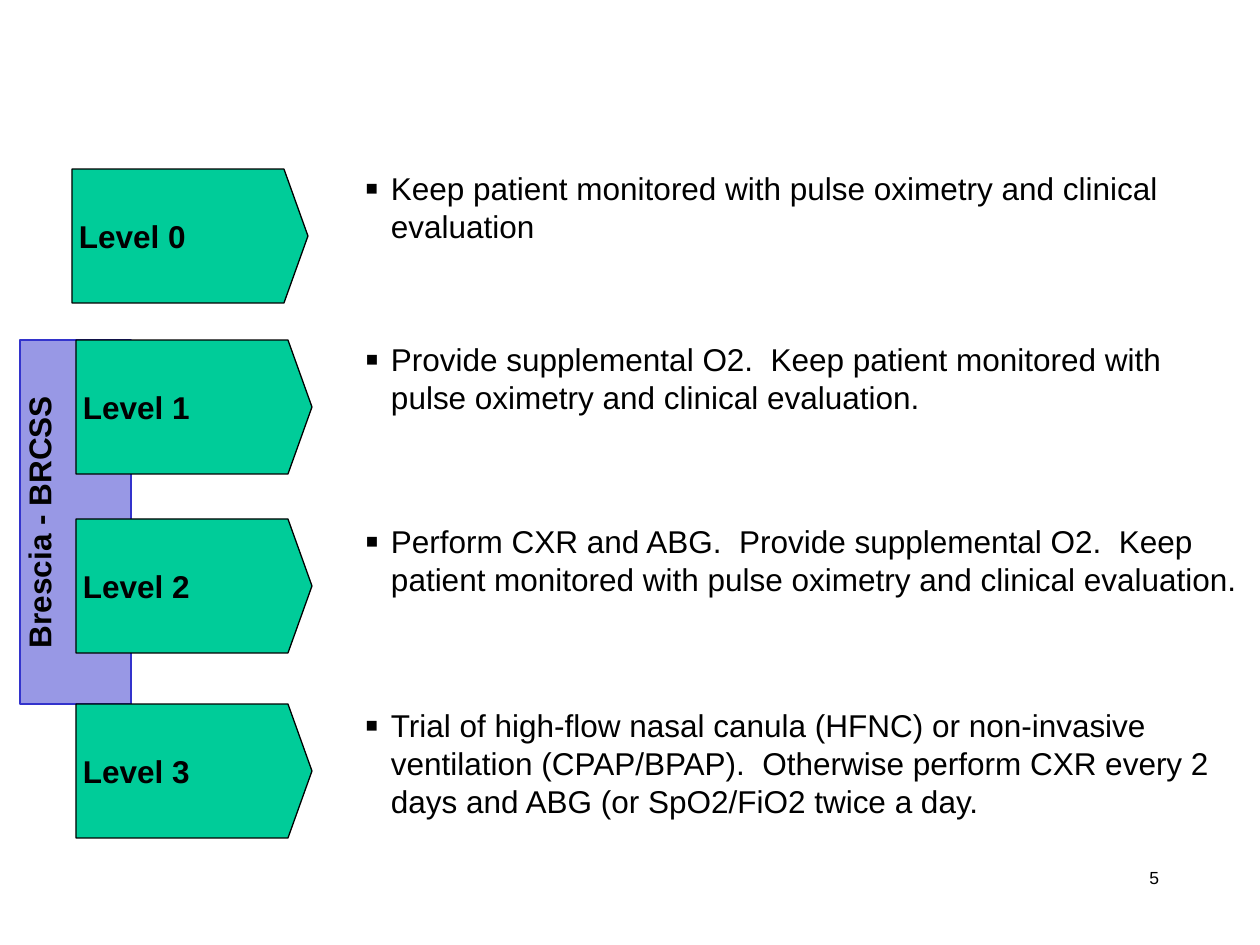
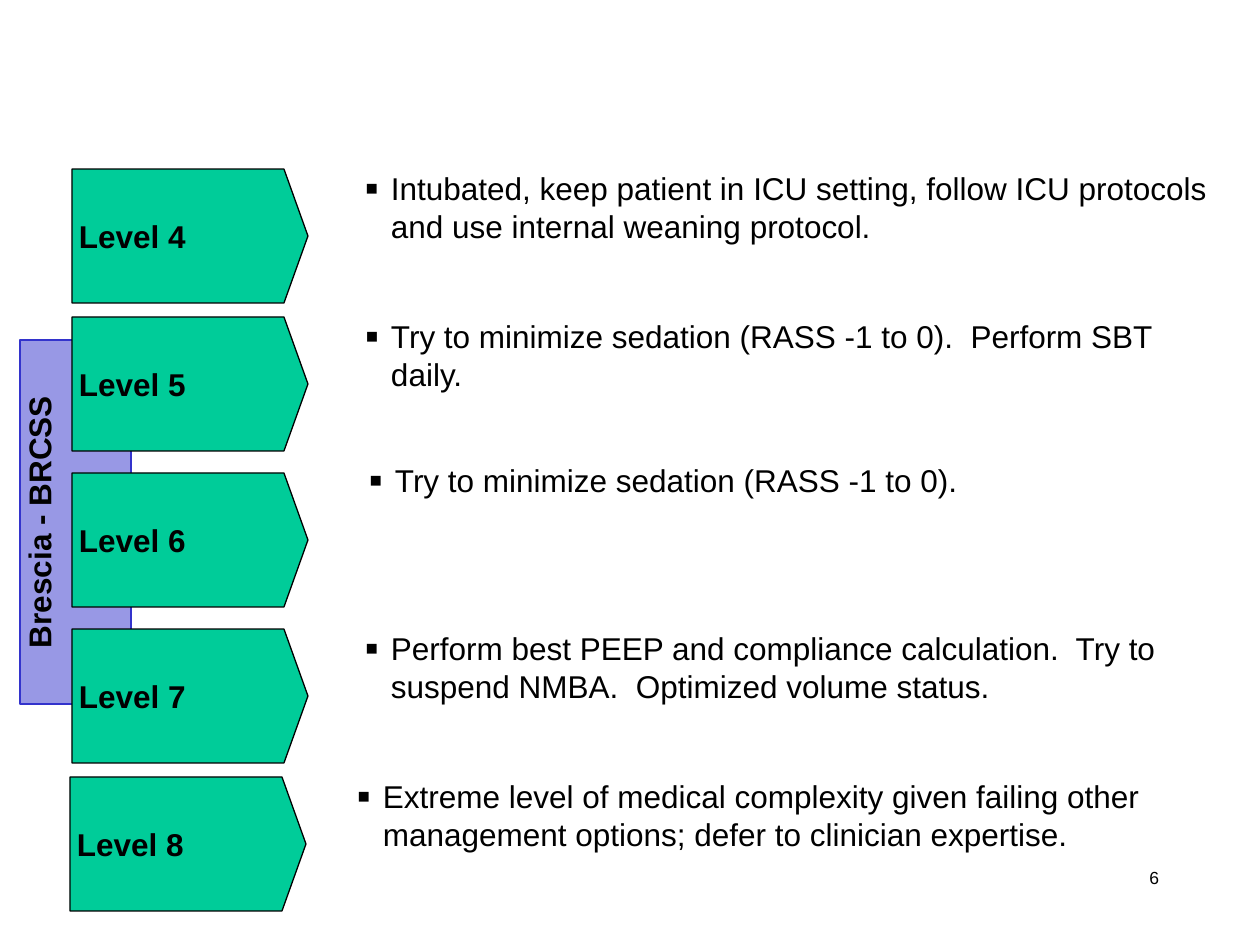
from lxml import etree
from pptx import Presentation
from pptx import util as u
from pptx.dml.color import RGBColor
from pptx.enum import shapes, text
from pptx.oxml.ns import qn

PX = 914400 / 126
FONT = "Arial"
BLACK, GREEN, BLUE = "000000", "00CC99", "3333CC"
ARROW_W, ARROW_H, ARROW_TIP = 236, 134, 24
BAND_LEFT, BAND_TOP, BAND_W, BAND_H = 20, 340, 111, 364

SLIDES = [
    (5, [
        ("Level 0", (72, 169), (363, 169, 858),
         "Keep patient monitored with pulse oximetry and clinical evaluation"),
        ("Level 1", (76, 340), (363, 340, 825),
         "Provide supplemental O2.  Keep patient monitored with pulse oximetry "
         "and clinical evaluation."),
        ("Level 2", (76, 519), (363, 522, 874),
         "Perform CXR and ABG.  Provide supplemental O2.  Keep patient monitored "
         "with pulse oximetry and clinical evaluation."),
        ("Level 3", (76, 704), (363, 706, 858),
         "Trial of high-flow nasal canula (HFNC) or non-invasive ventilation "
         "(CPAP/BPAP).  Otherwise perform CXR every 2 days and ABG "
         "(or SpO2/FiO2 twice a day."),
    ]),
    (6, [
        ("Level 4", (72, 169), (363, 169, 858),
         "Intubated, keep patient in ICU setting, follow ICU protocols and use "
         "internal weaning protocol."),
        ("Level 5", (72, 317), (363, 317, 825),
         "Try to minimize sedation (RASS -1 to 0).  Perform SBT daily."),
        ("Level 6", (72, 473), (367, 461, 874),
         "Try to minimize sedation (RASS -1 to 0)."),
        ("Level 7", (72, 629), (363, 629, 858),
         "Perform best PEEP and compliance calculation.  Try to suspend NMBA.  "
         "Optimized volume status."),
        ("Level 8", (70, 777), (355, 777, 874),
         "Extreme level of medical complexity given failing other management "
         "options; defer to clinician expertise."),
    ]),
]


def px(n):
    return u.Emu(round(n * PX))


def rgb(color):
    return RGBColor.from_string(color)


def write(sp, words, size=18, bold=False, align=text.PP_ALIGN.LEFT,
          anchor=text.MSO_ANCHOR.TOP, inset=0, left=0, wrap=True):
    tf = sp.text_frame
    tf.word_wrap = wrap
    tf.vertical_anchor = anchor
    tf.margin_top = tf.margin_bottom = tf.margin_right = px(inset)
    tf.margin_left = px(left or inset)
    p = tf.paragraphs[0]
    p.alignment = align
    r = p.add_run()
    r.text = words
    r.font.name = FONT
    r.font.size = u.Pt(size)
    r.font.bold = bold
    r.font.color.rgb = rgb(BLACK)
    return p


def add_filled(s, kind, x, y, w, h, fill, line, line_pt, adjust):
    sp = s.shapes.add_shape(kind, px(x), px(y), px(w), px(h))
    sp.shadow.inherit = False
    sp.fill.solid()
    sp.fill.fore_color.rgb = rgb(fill)
    sp.line.color.rgb = rgb(line)
    sp.line.width = u.Pt(line_pt)
    sp.adjustments[0] = adjust
    return sp


def set_alpha(sp, percent):
    color = sp.element.spPr.find(qn("a:solidFill"))[0]
    etree.SubElement(color, qn("a:alpha"), val=str(percent * 1000))


def set_bullet(p):
    pPr = p._p.get_or_add_pPr()
    pPr.set("marL", str(px(28)))
    pPr.set("indent", str(-px(26)))
    clr = etree.SubElement(pPr, qn("a:buClr"))
    etree.SubElement(clr, qn("a:srgbClr"), val=BLACK)
    etree.SubElement(pPr, qn("a:buSzPct"), val="125000")
    etree.SubElement(pPr, qn("a:buFont"), typeface=FONT)
    etree.SubElement(pPr, qn("a:buChar"), char="▪")


def add_score_band(s):
    x = BAND_LEFT + (BAND_W - BAND_H) / 2
    y = BAND_TOP + (BAND_H - BAND_W) / 2
    sp = add_filled(s, shapes.MSO_SHAPE.ROUNDED_RECTANGLE, x, y, BAND_H, BAND_W,
                    BLUE, BLUE, 1, 0)
    sp.rotation = 270
    set_alpha(sp, 50)
    write(sp, "Brescia - BRCSS", bold=True, align=text.PP_ALIGN.CENTER)


def add_level_arrow(s, level, x, y):
    sp = add_filled(s, shapes.MSO_SHAPE.PENTAGON, x, y, ARROW_W, ARROW_H,
                    GREEN, BLACK, 0.75, ARROW_TIP / ARROW_H)
    write(sp, level, bold=True, anchor=text.MSO_ANCHOR.MIDDLE, left=7)


def add_advice(s, words, x, y, w):
    sp = s.shapes.add_textbox(px(x), px(y), px(w), px(77))
    p = write(sp, words)
    p.level = 1
    set_bullet(p)


def add_page_number(s, number):
    sp = s.shapes.add_textbox(px(1131), px(861), px(34), px(31))
    write(sp, str(number), size=10, align=text.PP_ALIGN.RIGHT, inset=6, wrap=False)


def main():
    prs = Presentation()
    prs.slide_width, prs.slide_height = px(1260), px(945)
    for number, levels in SLIDES:
        s = prs.slides.add_slide(prs.slide_layouts[6])
        add_page_number(s, number)
        add_score_band(s)
        for level, arrow_at, advice_at, advice in levels:
            add_level_arrow(s, level, *arrow_at)
            add_advice(s, advice, *advice_at)
    prs.save("out.pptx")


if __name__ == "__main__":
    main()
